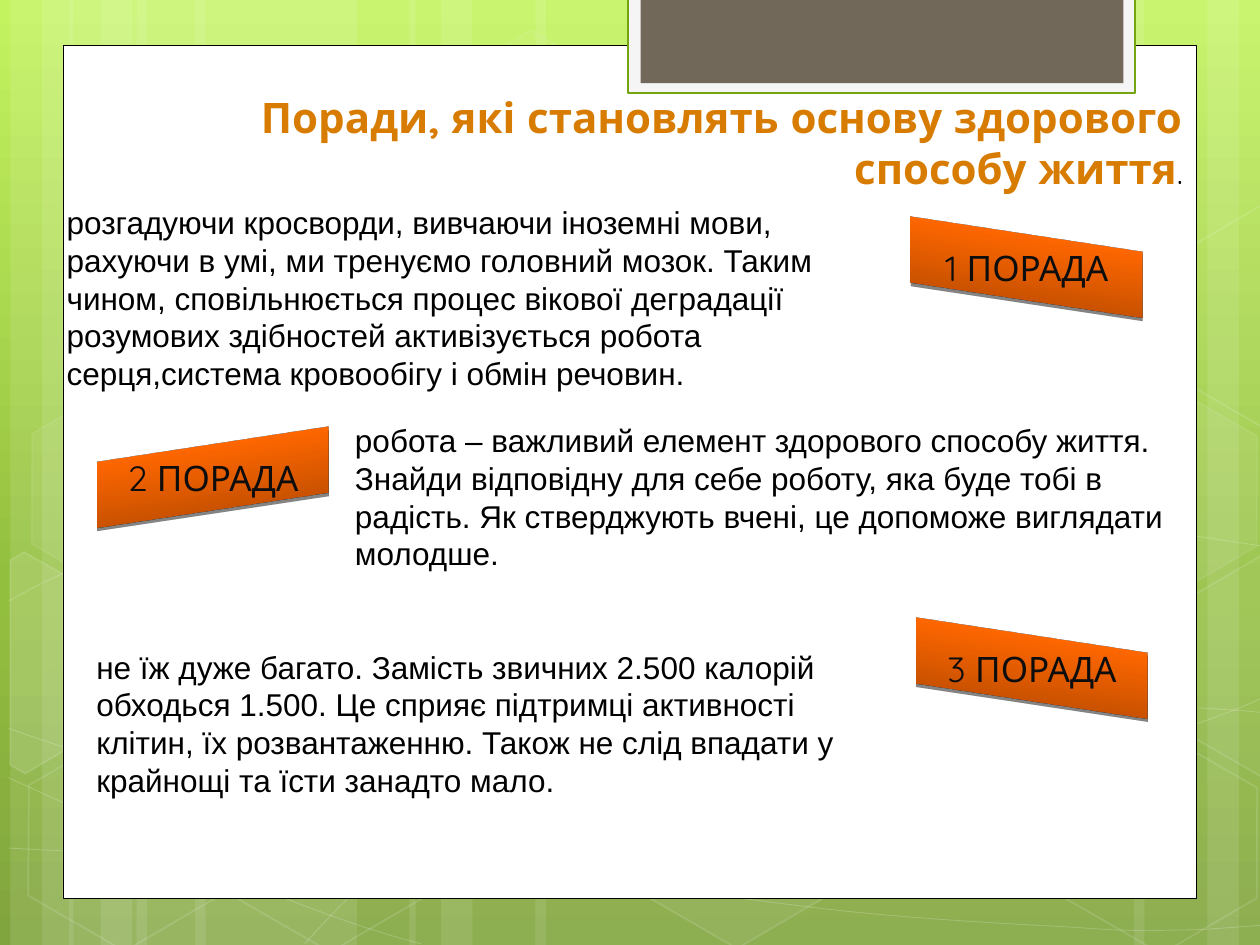
from copy import deepcopy
from lxml.etree import SubElement
from pptx import Presentation
from pptx.dml.color import RGBColor
from pptx.enum.shapes import MSO_SHAPE as Preset
from pptx.enum.text import MSO_ANCHOR as Anchor, PP_ALIGN as Align
from pptx.oxml.ns import qn
from pptx.util import Pt

WHITE = RGBColor(0xFF, 0xFF, 0xFF)
BLACK = RGBColor(0, 0, 0)
INK = RGBColor(0x0D, 0x0D, 0x0D)
LIGHT_GREEN = RGBColor(0xC3, 0xF3, 0x5F)
MID_GREEN = RGBColor(0x93, 0xBF, 0x3F)
DARK_GREEN = RGBColor(0x81, 0xA5, 0x3E)
TAB_GREEN = RGBColor(0x74, 0xA5, 0x10)
TAB_GREY = RGBColor(0xF5, 0xF5, 0xF5)
TAB_BROWN = RGBColor(0x71, 0x68, 0x5A)
GOLD = RGBColor(0xD7, 0x7C, 0x01)
ORANGE = RGBColor(0xFF, 0x67, 0x00)
DARK_ORANGE = RGBColor(0xCB, 0x52, 0x00)

STRIPES = [(78, 126), (6, 36), (24, 60), (111.5, 126), (39.5, 36), (57.5, 60),
           (528, 126), (690, 36), (648, 60), (306, 222), (234, 36), (252, 60)]
HEXAGONS = [(240.5, 26, 4, 8), (358, 424, 6, 12), (8, 425.5, 0, 12),
            (10, 224.5, 7, 8), (125.5, 426, 0, 12), (542, 326, 10, 12),
            (600.5, 427, 0, 12), (600.5, 226, 7, 8)]
CUT_HEXAGONS = [
    (10, [(5.8, 320.4), (13.7, 315.4), (69.1, 347), (68.4, 410.4), (14.4, 442.1), (5.8, 437)]),
    (4, [(666.7, 349.2), (720.7, 317.5), (726.5, 321.1), (726.5, 441.4), (721.4, 444.2), (666.7, 412.6)]),
    (0, [(666.7, 149), (720.7, 117.4), (727.2, 121), (726.5, 241.2), (721.4, 244.1), (666.7, 212.4)]),
]
CURVES = [
    [(5, 484.6), (43.9, 486.7), (82.8, 488.9), (136.8, 488.2), (190.8, 487.4),
     (257.8, 486), (329.8, 478.8), (401.8, 471.6), (504, 457.9), (570.2, 444.2),
     (635.8, 430.6), (703.4, 409), (725, 396.7)],
    [(5, 343.4), (25.9, 331.9), (46.8, 321.1), (87.1, 310.3), (128.2, 299.5),
     (186.5, 283.7), (249.8, 278.6), (313.9, 273.6), (391.7, 272.9), (470.9, 278.6),
     (550.1, 284.4), (681.8, 306.7), (725, 312.5)],
    [(4.3, 444.2), (91.4, 483.8), (177.8, 523.4), (240.5, 539.3)],
    [(5, 416.2), (27.4, 424.1), (50.4, 432), (92.2, 443.5), (133.9, 454.3),
     (196.6, 472.3), (257, 484.6), (316.8, 496.8), (392.4, 509.8), (452.2, 517),
     (511.9, 524.9), (576, 527.8), (614.2, 529.9), (651.6, 532.8), (661.7, 531.4),
     (680.4, 531.4), (699.1, 530.6), (712.1, 529.2), (725, 528.5)],
    [(174.2, 539.3), (187.2, 524.9), (200.2, 510.5), (217.4, 497.5), (234.7, 484.6),
     (259.2, 470.2), (279.4, 460.1), (299.5, 450), (311.8, 445.7), (338.4, 438.5),
     (364.3, 431.3), (412.6, 421.2), (437.8, 416.2), (463.7, 411.1), (467.3, 411.1),
     (489.6, 409.7), (511.9, 407.5), (547.2, 405.4), (571.7, 404.6), (596.9, 403.9),
     (637.9, 404.6), (637.9, 404.6), (654, 404.6), (670, 404.6), (686.2, 404.6),
     (699.1, 405.4), (711.4, 406.1), (717.8, 406.8), (724.3, 407.5), (722.2, 406.8),
     (724.3, 407.5)],
]


def fade(color_format, percent):
    color = color_format._xFill.find(qn("a:srgbClr"))
    if percent < 100:
        SubElement(color, qn("a:alpha")).set("val", str(percent * 1000))


def paint(shape, fill=None, fill_alpha=100, line=None, width=1, line_alpha=100):
    shape.shadow.inherit = False
    if fill is None:
        shape.fill.background()
    else:
        shape.fill.solid()
        shape.fill.fore_color.rgb = fill
        fade(shape.fill.fore_color, fill_alpha)
    if line is None:
        shape.line.fill.background()
    else:
        shape.line.width = Pt(width)
        shape.line.color.rgb = line
        fade(shape.line.fill.fore_color, line_alpha)


def grade(fill, stops):
    fill.gradient()
    fill.gradient_angle = 270
    first = fill.gradient_stops[0]._gs
    for _ in stops[2:]:
        first.addnext(deepcopy(first))
    for stop, (position, color) in zip(fill.gradient_stops, stops):
        stop.position = position
        stop.color.rgb = color


def add_block(slide, preset, box, **style):
    block = slide.shapes.add_shape(preset, *map(Pt, box))
    paint(block, **style)
    return block


def add_outline(slide, points, close=True):
    points = [(Pt(x), Pt(y)) for x, y in points]
    builder = slide.shapes.build_freeform(*points[0])
    builder.add_line_segments(points[1:], close=close)
    return builder.convert_to_shape()


def add_curve(slide, points):
    curve = add_outline(slide, points, close=False)
    outline = next(curve._element.iter(qn("a:moveTo"))).getparent()
    segments = outline.findall(qn("a:lnTo"))
    for start in range(0, len(segments), 3):
        bend = SubElement(outline, qn("a:cubicBezTo"))
        for segment in segments[start:start + 3]:
            bend.append(segment[0])
            outline.remove(segment)
    return curve


def write(paragraph, text, font="Arial", size=18, color=BLACK, bold=False,
          align=Align.LEFT):
    paragraph.alignment = align
    run = paragraph.add_run()
    run.text = text
    run.font.name = font
    run.font.size = Pt(size)
    run.font.bold = bold
    run.font.color.rgb = color


def add_backdrop(slide, box):
    left, top, width, height = box
    grade(slide.background.fill, [(0, LIGHT_GREEN), (0.62, MID_GREEN), (1, DARK_GREEN)])
    for x, stripe_width in STRIPES:
        add_block(slide, Preset.RECTANGLE, (left + x, top, stripe_width, height),
                  fill=WHITE, fill_alpha=10)
    for controls in CURVES:
        points = [(left + x, top + y) for x, y in controls]
        paint(add_curve(slide, points), line=WHITE, width=0.5, line_alpha=20)
    for x, y, fill_alpha, line_alpha in HEXAGONS:
        hexagon = add_block(slide, Preset.HEXAGON, (left + x, top + y, 126, 109.5),
                            fill=WHITE if fill_alpha else None, fill_alpha=fill_alpha,
                            line=WHITE, line_alpha=line_alpha)
        hexagon.adjustments[0] = 0.285
        hexagon.adjustments[1] = 1.155
        hexagon.rotation = 30
    for fill_alpha, corners in CUT_HEXAGONS:
        points = [(left + x, top + y) for x, y in corners]
        paint(add_outline(slide, points), fill=WHITE if fill_alpha else None,
              fill_alpha=fill_alpha, line=WHITE, line_alpha=12)


def add_page(slide, box):
    left, top, width, _ = box
    add_block(slide, Preset.RECTANGLE, box, fill=WHITE, line=BLACK, width=0.5)
    tab_left = left + width - 325
    add_block(slide, Preset.RECTANGLE, (tab_left, top - 27.5, 289.5, 54.5),
              fill=TAB_GREY, line=TAB_GREEN, width=1.25)
    add_block(slide, Preset.RECTANGLE, (tab_left + 7, top - 27.5, 276, 49),
              fill=TAB_BROWN)


def add_text_box(slide, box):
    frame = slide.shapes.add_textbox(*map(Pt, box)).text_frame
    frame.word_wrap = True
    return frame.paragraphs[0]


def add_title(slide, box):
    title = add_text_box(slide, box)
    write(title, "Поради, які становлять основу здорового способу життя",
          font="Quicksand", size=24, color=GOLD, bold=True, align=Align.RIGHT)
    write(title, ".", font="Quicksand", align=Align.RIGHT)


def add_banner(slide, box, label, camera):
    banner = add_block(slide, Preset.RECTANGLE, box, line=ORANGE, width=0.75)
    grade(banner.fill, [(0, ORANGE), (1, DARK_ORANGE)])
    properties = banner._element.spPr
    shadow = SubElement(properties.find(qn("a:effectLst")), qn("a:outerShdw"),
                        blurRad=str(Pt(4)), dist=str(Pt(2)), dir="5400000",
                        rotWithShape="0")
    shade = SubElement(shadow, qn("a:srgbClr"), val=str(BLACK))
    SubElement(shade, qn("a:alpha"), val="28000")
    scene = SubElement(properties, qn("a:scene3d"))
    SubElement(scene, qn("a:camera"), prst=camera)
    SubElement(scene, qn("a:lightRig"), rig="threePt", dir="t")
    SubElement(properties, qn("a:sp3d"))
    frame = banner.text_frame
    frame.word_wrap = True
    frame.vertical_anchor = Anchor.MIDDLE
    write(frame.paragraphs[0], label, font="Quicksand", size=20, color=INK,
          align=Align.CENTER)


def add_tip(slide, banner_box, text_box, label, advice, camera="isometricOffAxis2Left"):
    add_banner(slide, banner_box, label, camera)
    write(add_text_box(slide, text_box), advice)


def main():
    deck = Presentation()
    deck.slide_width, deck.slide_height = Pt(720), Pt(540)
    slide = deck.slides.add_slide(deck.slide_layouts[6])
    add_backdrop(slide, (0, 0, 720, 540))
    add_page(slide, (36, 26, 648, 487.5))
    add_title(slide, (48, 49, 635, 65.5))
    add_tip(slide, (513, 133, 147.5, 39.5), (31, 112.5, 487.5, 116.5), "1 ПОРАДА",
            "розгадуючи кросворди, вивчаючи іноземні мови, рахуючи в умі, ми тренуємо головний мозок. Таким чином, сповільнюється процес вікової деградації розумових здібностей активізується робота серця,система кровообігу і обмін речовин.")
    add_tip(slide, (48, 253, 147.5, 39.5), (195.8, 237, 481.5, 94.5), "2 ПОРАДА",
            "робота – важливий елемент здорового способу життя. Знайди відповідну для себе роботу, яка буде тобі в радість. Як стверджують вчені, це допоможе виглядати молодше.",
            camera="isometricOffAxis1Right")
    add_tip(slide, (516, 362, 147.5, 39.5), (48, 366.5, 468, 94.5), "3 ПОРАДА",
            "не їж дуже багато. Замість звичних 2.500 калорій обходься 1.500. Це сприяє підтримці активності клітин, їх розвантаженню. Також не слід впадати у крайнощі та їсти занадто мало.")
    deck.save("out.pptx")


if __name__ == "__main__":
    main()
